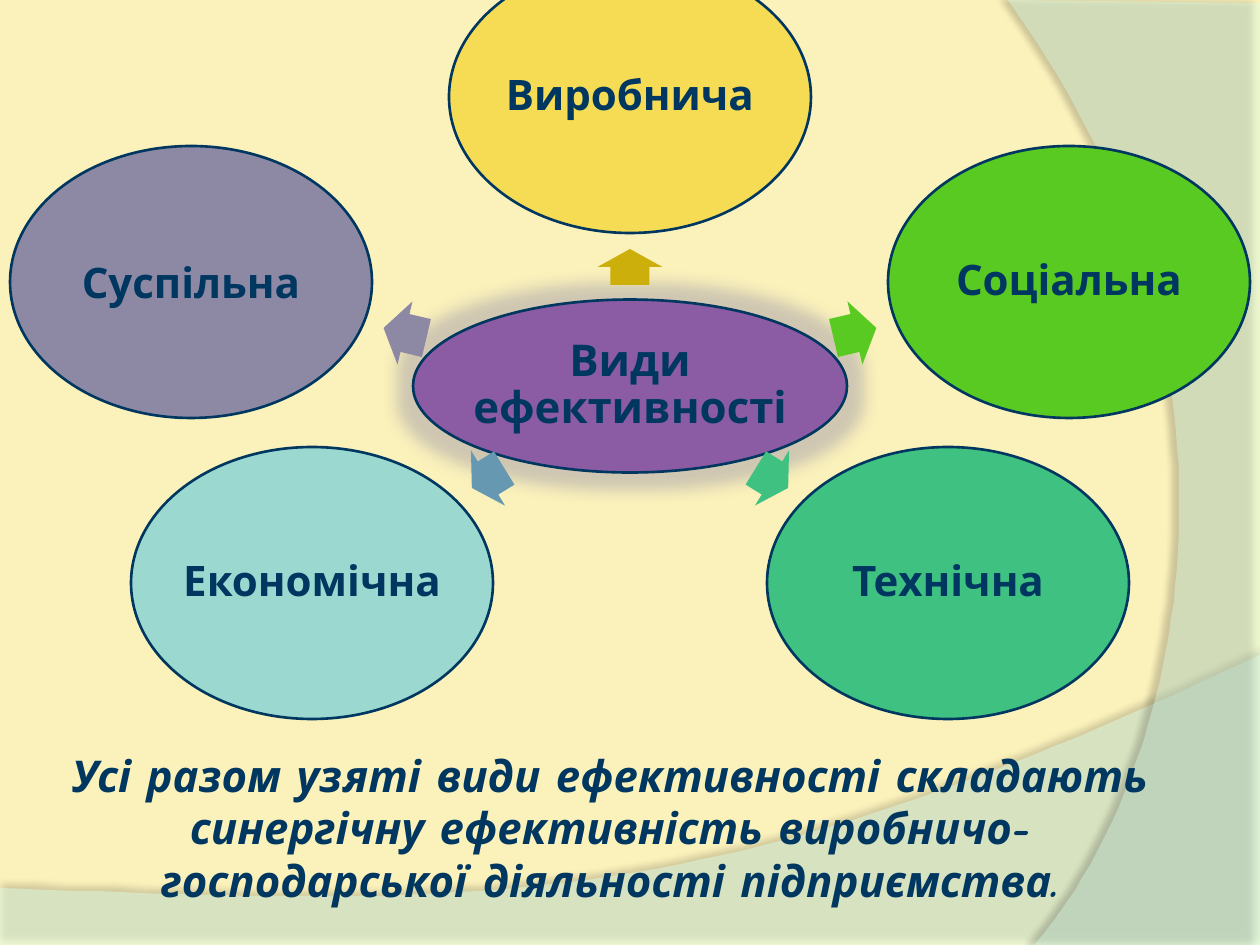
from dataclasses import dataclass

from lxml import etree
from pptx import Presentation
from pptx.dml.color import RGBColor
from pptx.enum.shapes import MSO_SHAPE
from pptx.enum.text import MSO_ANCHOR, PP_ALIGN
from pptx.oxml.ns import qn
from pptx.util import Pt

ELLIPSE = MSO_SHAPE.OVAL
ARROW = MSO_SHAPE.RIGHT_ARROW
CENTER = PP_ALIGN.CENTER
MIDDLE = MSO_ANCHOR.MIDDLE

SCALE = 914400 / 126  # EMU per px
WIDTH, HEIGHT = 1260, 945
MIDDLE_X, MIDDLE_Y = 630, 386


@dataclass(frozen=True)
class Theme:
    font: str = "Comic Neue"
    ink: str = "003760"
    background: str = "FBF1BB"
    lower_wave: str = "DDFFEC"
    right_wave: str = "D9FFEA"
    shadow: str = "000000"
    hub: str = "7030A0"
    glow: str = "8D89A4"
    large: int = 25
    normal: int = 24
    outline: float = 1.5


def emu(px):
    return round(px * SCALE)


def write_text(frame, text, *, theme, size, italic=False, spacing=1.0, wrap=True, inset=6):
    frame.word_wrap = wrap
    frame.vertical_anchor = MIDDLE
    frame.margin_left = frame.margin_right = emu(inset)
    frame.margin_top = frame.margin_bottom = emu(inset)
    paragraph = frame.paragraphs[0]
    paragraph.text = text
    paragraph.alignment = CENTER
    paragraph.line_spacing = spacing
    for run in paragraph.runs:
        font = run.font
        font.name, font.size = theme.font, Pt(size)
        font.bold, font.italic = True, italic
        font.color.rgb = RGBColor.from_string(theme.ink)


def add_effect(shape, tag, color, alpha, **attributes):
    effects = shape._element.spPr.find(qn("a:effectLst"))
    effect = etree.SubElement(effects, qn(tag), {k: str(v) for k, v in attributes.items()})
    color_element = etree.SubElement(effect, qn("a:srgbClr"), val=color)
    etree.SubElement(color_element, qn("a:alpha"), val=str(alpha * 1000))


def curve_points(start, control_1, control_2, end, steps=60):
    """Points along a cubic curve, without its start."""
    for step in range(1, steps + 1):
        t = step / steps
        weights = ((1 - t) ** 3, 3 * t * (1 - t) ** 2, 3 * t * t * (1 - t), t ** 3)
        yield tuple(
            sum(weight * value for weight, value in zip(weights, axis))
            for axis in zip(start, control_1, control_2, end)
        )


class SlideBuilder:
    def __init__(self, slide, theme):
        self.slide = slide
        self.theme = theme

    def background(self):
        fill = self.slide.background.fill
        fill.solid()
        fill.fore_color.rgb = RGBColor.from_string(self.theme.background)

    def paint(self, shape, color, alpha=100, outlined=False):
        shape.shadow.inherit = False
        shape.fill.solid()
        shape.fill.fore_color.rgb = RGBColor.from_string(color)
        if alpha < 100:
            color_element = shape._element.spPr.find(qn("a:solidFill"))[0]
            etree.SubElement(color_element, qn("a:alpha"), val=str(alpha * 1000))
        if outlined:
            shape.line.color.rgb = RGBColor.from_string(self.theme.ink)
            shape.line.width = Pt(self.theme.outline)
        else:
            shape.line.fill.background()

    def wave(self, corners, curve, color, alpha, shadow_alpha, distance, direction):
        builder = self.slide.shapes.build_freeform(*corners[0], scale=SCALE)
        builder.add_line_segments([*corners[1:], *curve_points(corners[-1], *curve)], close=True)
        shape = builder.convert_to_shape()
        self.paint(shape, color, alpha)
        add_effect(shape, "a:outerShdw", self.theme.shadow, shadow_alpha, blurRad=Pt(4),
                   dist=Pt(distance), dir=direction * 60000, algn="ctr", rotWithShape=0)

    def centered_shape(self, kind, x, y, width, height):
        return self.slide.shapes.add_shape(
            kind, emu(x - width / 2), emu(y - height / 2), emu(width), emu(height))

    def ellipse(self, text, x, y, width, height, color, size, alpha=100, spacing=0.9):
        shape = self.centered_shape(ELLIPSE, x, y, width, height)
        self.paint(shape, color, alpha, outlined=True)
        write_text(shape.text_frame, text, theme=self.theme, size=size,
                   spacing=spacing, wrap=False, inset=4)
        return shape

    def arrow(self, x, y, length, rotation, color):
        shape = self.centered_shape(ARROW, x, y, length, 65)
        shape.adjustments[0], shape.adjustments[1] = 0.6, 0.5
        shape.rotation = rotation
        self.paint(shape, color)

    def caption(self, text, left, top, width, height):
        box = self.slide.shapes.add_textbox(emu(left), emu(top), emu(width), emu(height))
        write_text(box.text_frame, text, theme=self.theme, size=self.theme.large, italic=True)


# Label, ellipse offset from the hub, fill, alpha, line spacing,
# then arrow offset, length, rotation and colour
KINDS = [
    ("Виробнича", (0, -289), "F5DC54", 100, 0.9, (0, -119), 36, 270, "CCAF0A"),
    ("Соціальна", (439, -104), "59CA22", 100, 0.9, (225, -53), 44, 346.7, "59CA22"),
    ("Технічна", (318, 197), "3FC281", 100, 0.9, (142, 92), 38, 31.7, "3FC281"),
    ("Економічна", (-318, 197), "00B0F0", 38, 0.9, (-142, 92), 38, 148.3, "6699B1"),
    ("Суспільна", (-439, -104), "8D89A4", 100, 1.0, (-225, -53), 44, 193.3, "8D89A4"),
]


def main():
    presentation = Presentation()
    presentation.slide_width, presentation.slide_height = emu(WIDTH), emu(HEIGHT)
    theme = Theme()
    slide = presentation.slides.add_slide(presentation.slide_layouts[6])
    builder = SlideBuilder(slide, theme)

    # Background with two translucent waves
    builder.background()
    builder.wave([(0, 888), (0, HEIGHT), (WIDTH, HEIGHT), (WIDTH, 655)],
                 [(704, 919), (493, 906), (0, 888)], theme.lower_wave, 45, 35, 3.5, 270)
    builder.wave([(WIDTH, 3), (WIDTH, HEIGHT), (1034, HEIGHT)],
                 [(1178, 780), (1283, 378), (1008, 0)], theme.right_wave, 40, 45, 4, 180)

    # Conclusion
    builder.caption("Усі разом узяті види ефективності складають синергічну ефективність "
                    "виробничо-господарської діяльності підприємства.", 59, 748, 1102, 158)

    # Hub
    hub = builder.ellipse("Види\vефективності", MIDDLE_X, MIDDLE_Y, 434, 173,
                          theme.hub, theme.large, alpha=71)
    add_effect(hub, "a:glow", theme.glow, 40, rad=Pt(18))

    # Kinds of efficiency around the hub
    for label, (dx, dy), fill, alpha, spacing, (ax, ay), length, rotation, arrow_fill in KINDS:
        builder.arrow(MIDDLE_X + ax, MIDDLE_Y + ay, length, rotation, arrow_fill)
        builder.ellipse(label, MIDDLE_X + dx, MIDDLE_Y + dy, 362, 272,
                        fill, theme.normal, alpha, spacing)

    presentation.save("out.pptx")


if __name__ == "__main__":
    main()
